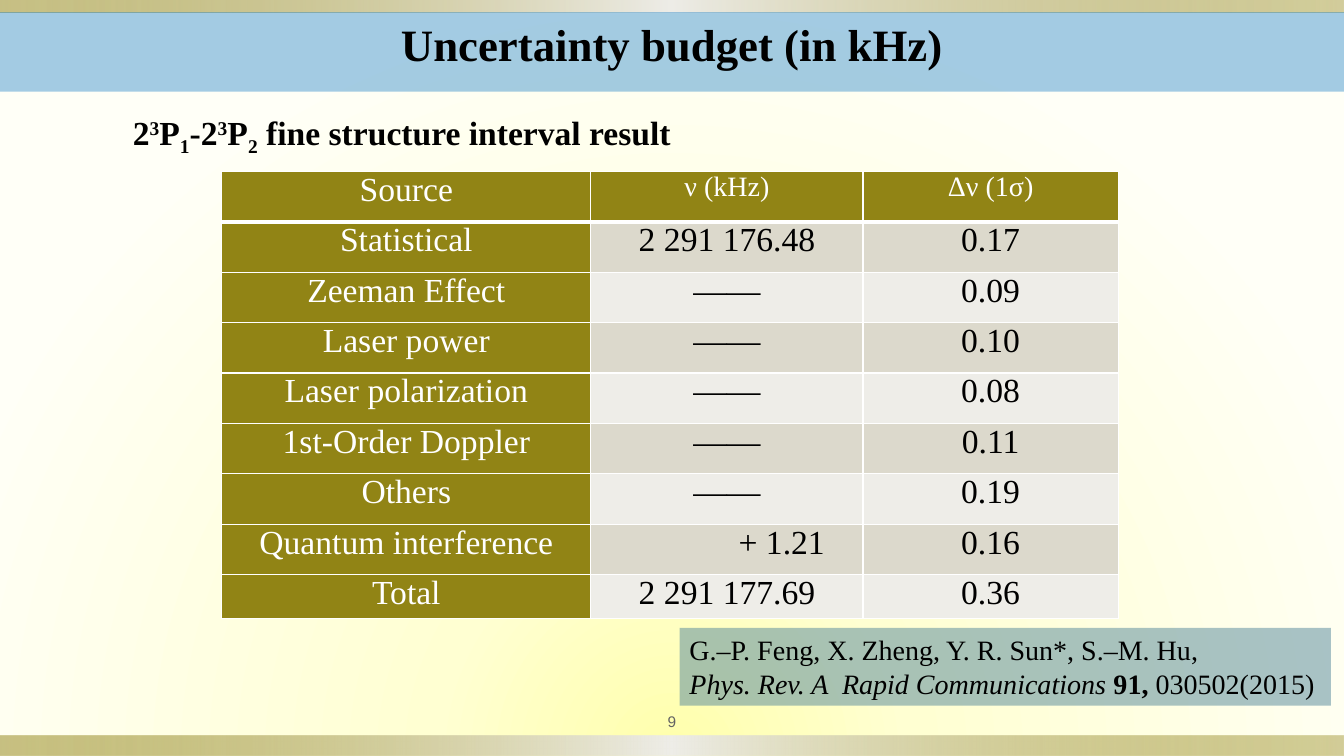
from dataclasses import dataclass
from pptx import Presentation
from pptx.dml.color import RGBColor
from pptx.enum.shapes import MSO_SHAPE
from pptx.enum.text import MSO_ANCHOR, MSO_AUTO_SIZE, PP_ALIGN
from pptx.oxml import parse_xml
from pptx.oxml.ns import nsdecls, qn
from pptx.util import Inches, Pt

RECT = MSO_SHAPE.RECTANGLE
TOP, MIDDLE = MSO_ANCHOR.TOP, MSO_ANCHOR.MIDDLE
LEFT, CENTER, RIGHT = PP_ALIGN.LEFT, PP_ALIGN.CENTER, PP_ALIGN.RIGHT
FIT_SHAPE = MSO_AUTO_SIZE.SHAPE_TO_FIT_TEXT

TITLE = [[("Uncertainty budget (in kHz)", "b")]]
SUBTITLE = [[
    ("2", "b"), ("3", "b^"), ("P", "b"), ("1", "b_"), ("-2", "b"),
    ("3", "b^"), ("P", "b"), ("2", "b_"), (" fine structure interval result", "b"),
]]
CITATION = [
    [("G.–P. Feng, X. Zheng, Y. R. Sun*, S.–M. Hu,", "")],
    [("Phys. Rev. A  Rapid Communications ", "i"), ("91, ", "b"), ("030502(2015)", "")],
]
PAGE_NUMBER = [[("9", "")]]
DASH = "——"
SHIFT = "+ 1.21"
BUDGET = [
    ("Source", "ν (kHz)", "Δν (1σ)"),
    ("Statistical", "2 291 176.48", "0.17"),
    ("Zeeman Effect", DASH, "0.09"),
    ("Laser power", DASH, "0.10"),
    ("Laser polarization", DASH, "0.08"),
    ("1st-Order Doppler", DASH, "0.11"),
    ("Others", DASH, "0.19"),
    ("Quantum interference", SHIFT, "0.16"),
    ("Total", "2 291 177.69", "0.36"),
]
COL_WIDTHS = (3.66, 2.7, 2.53)
ROW_HEIGHTS = [0.5] * 8 + [0.44]


@dataclass(frozen=True)
class Theme:
    serif: str = "Times New Roman"
    sans: str = "Arial"
    black: str = "000000"
    white: str = "FFFFFF"
    grey: str = "636363"
    olive: str = "918415"
    bands: tuple = ("EEEDE8", "DCD9CC")
    title_bar: str = "0070C0"
    citation_box: str = "55889B"
    glow: tuple = ((0, "FFFFAC", 100), (31, "FFFFD2", 100), (100, "FFFFF7", 100))
    strip: tuple = ((0, "918415", 50), (50, "EEEDE8", 100), (100, "918415", 40))
    title_size: int = 32
    body_size: int = 24
    small_size: int = 20
    page_size: int = 11


T = Theme()


def rgb(color):
    return RGBColor.from_string(color)


def gradient(stops, direction):
    gs = "".join(
        f'<a:gs pos="{pos * 1000}"><a:srgbClr val="{color}">'
        f'<a:alpha val="{alpha * 1000}"/></a:srgbClr></a:gs>'
        for pos, color, alpha in stops
    )
    return parse_xml(
        f'<a:gradFill {nsdecls("a")} rotWithShape="1">'
        f"<a:gsLst>{gs}</a:gsLst>{direction}</a:gradFill>"
    )


def replace_fill(parent, fill):
    parent.replace(parent.find(qn("a:solidFill")), fill)


def write(tf, paragraphs, size, align=LEFT, color=T.black, font=T.serif):
    for i, runs in enumerate(paragraphs):
        p = tf.paragraphs[0] if i == 0 else tf.add_paragraph()
        p.alignment = align
        for text, style in runs:
            r = p.add_run()
            r.text = text
            r.font.name = font
            r.font.size = Pt(size)
            r.font.color.rgb = rgb(color)
            r.font.bold = "b" in style
            r.font.italic = "i" in style
            if "^" in style:
                r.font._element.set("baseline", "30000")
            if "_" in style:
                r.font._element.set("baseline", "-25000")


def add_rect(s, box, color, alpha=100):
    sp = s.shapes.add_shape(RECT, *map(Inches, box))
    sp.shadow.inherit = False
    sp.line.fill.background()
    sp.fill.solid()
    sp.fill.fore_color.rgb = rgb(color)
    clr = sp._element.spPr.find(qn("a:solidFill"))[0]
    clr.append(parse_xml(f'<a:alpha {nsdecls("a")} val="{alpha * 1000}"/>'))
    sp.text_frame.word_wrap = True
    sp.text_frame.vertical_anchor = TOP
    return sp


def add_strip(s, top, height):
    sp = add_rect(s, (0, top, 13.33, height), T.olive)
    replace_fill(sp._element.spPr, gradient(T.strip, '<a:lin ang="0" scaled="0"/>'))


def add_borders(cell, bottom):
    tcPr = cell._tc.get_or_add_tcPr()
    for side, width in (("L", 1), ("R", 1), ("T", 1), ("B", bottom)):
        tcPr.append(parse_xml(
            f'<a:ln{side} {nsdecls("a")} w="{Pt(width)}"><a:solidFill>'
            f'<a:srgbClr val="{T.white}"/></a:solidFill></a:ln{side}>'
        ))


def add_budget(s, left, top):
    frame = s.shapes.add_table(
        len(BUDGET), len(COL_WIDTHS), Inches(left), Inches(top),
        Inches(sum(COL_WIDTHS)), Inches(sum(ROW_HEIGHTS)),
    )
    table = frame.table
    for col, width in zip(table.columns, COL_WIDTHS):
        col.width = Inches(width)
    for i, (values, height) in enumerate(zip(BUDGET, ROW_HEIGHTS)):
        table.rows[i].height = Inches(height)
        for j, text in enumerate(values):
            cell = table.cell(i, j)
            heading = i == 0 or j == 0
            shifted = text == SHIFT
            cell.margin_left = Inches(0.1)
            cell.margin_right = Inches(0.38 if shifted else 0.1)
            cell.margin_top = cell.margin_bottom = 0
            add_borders(cell, 3 if i == 0 else 1)
            cell.fill.solid()
            cell.fill.fore_color.rgb = rgb(T.olive if heading else T.bands[i % 2])
            write(
                cell.text_frame, [[(text, "")]],
                T.small_size if i == 0 and j > 0 else T.body_size,
                RIGHT if shifted else CENTER, T.white if heading else T.black,
            )
            cell.text_frame.paragraphs[0].space_before = Pt(6)


def main():
    prs = Presentation()
    prs.slide_width, prs.slide_height = Inches(13.33), Inches(7.5)
    s = prs.slides.add_slide(prs.slide_layouts[6])

    s.background.fill.solid()
    replace_fill(s._element.find(".//" + qn("p:bgPr")), gradient(
        T.glow,
        '<a:path path="circle"><a:fillToRect l="50000" t="150000" r="50000" b="0"/></a:path>',
    ))
    add_strip(s, 7.3, 0.2)
    add_strip(s, 0, 0.12)
    add_budget(s, 2.2, 1.7)

    citation = add_rect(s, (6.74, 6.23, 6.46, 0.77), T.citation_box, 51)
    citation.text_frame.auto_size = FIT_SHAPE
    write(citation.text_frame, CITATION, T.small_size)

    page = s.shapes.add_textbox(Inches(6), Inches(7), Inches(1.33), Inches(0.31))
    tf = page.text_frame
    tf.word_wrap = True
    tf.vertical_anchor = MIDDLE
    tf.margin_left = tf.margin_right = tf.margin_top = tf.margin_bottom = Inches(0.05)
    write(tf, PAGE_NUMBER, T.page_size, CENTER, T.grey, T.sans)

    title = add_rect(s, (0, 0.12, 13.33, 0.79), T.title_bar, 36)
    write(title.text_frame, TITLE, T.title_size, CENTER)

    subtitle = s.shapes.add_textbox(Inches(1.22), Inches(1.06), Inches(5.6), Inches(0.5))
    subtitle.text_frame.word_wrap = False
    subtitle.text_frame.auto_size = FIT_SHAPE
    write(subtitle.text_frame, SUBTITLE, T.body_size)

    prs.save("out.pptx")


if __name__ == "__main__":
    main()
